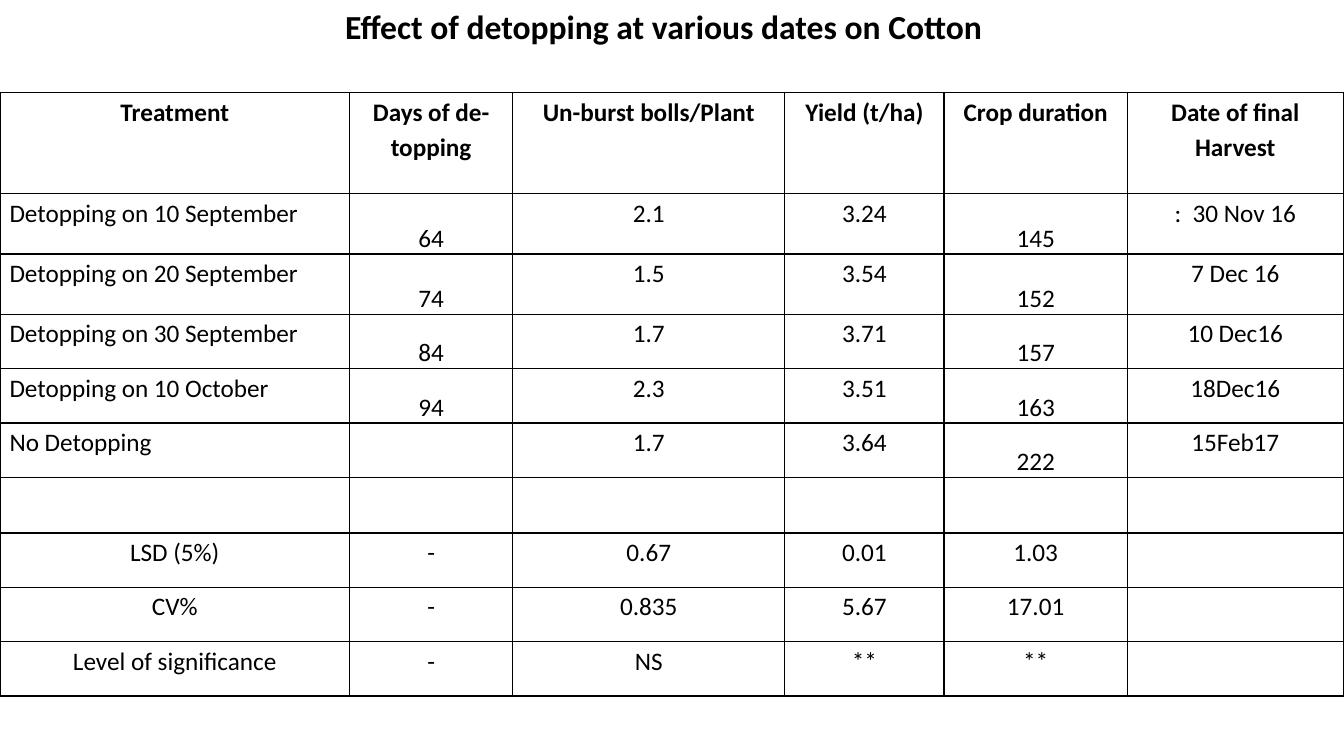
from pptx import Presentation
from pptx.dml.color import RGBColor
from pptx.enum import text
from pptx.oxml import parse_xml
from pptx.oxml.ns import nsdecls
from pptx.util import Cm, Pt

BLACK = RGBColor(0x00, 0x00, 0x00)
FONT = "Calibri"
CENTER, LEFT = text.PP_ALIGN.CENTER, text.PP_ALIGN.LEFT
TOP, BOTTOM = text.MSO_ANCHOR.TOP, text.MSO_ANCHOR.BOTTOM

COLUMN_WIDTHS = [8.81, 4.11, 6.86, 4.01, 4.62, 5.44]
ROW_HEIGHTS = [2.54, 1.52, 1.52, 1.37, 1.37, 1.37, 1.4, 1.37, 1.37, 1.37]
TREATMENT_ROWS = range(1, 6)
DAYS_COLUMNS = (1, 4)

ROWS = [
    ["Treatment", "Days of de-topping", "Un-burst bolls/Plant",
     "Yield (t/ha)", "Crop duration", "Date of final Harvest"],
    ["Detopping on 10 September", "64", "2.1", "3.24", "145", ":  30 Nov 16"],
    ["Detopping on 20 September", "74", "1.5", "3.54", "152", "7 Dec 16"],
    ["Detopping on 30 September", "84", "1.7", "3.71", "157", "10 Dec16"],
    ["Detopping on 10 October", "94", "2.3", "3.51", "163", "18Dec16"],
    ["No Detopping", "", "1.7", "3.64", "222", "15Feb17"],
    [""] * 6,
    ["LSD (5%)", "-", "0.67", "0.01", "1.03", ""],
    ["CV%", "-", "0.835", "5.67", "17.01", ""],
    ["Level of significance", "-", "NS", "**", "**", ""],
]


def set_attributes(obj, values):
    for name, value in values.items():
        setattr(obj, name, value)


def write(p, words, size, bold, align):
    p.alignment = align
    r = p.add_run()
    r.text = words
    set_attributes(r.font, {"name": FONT, "size": Pt(size), "bold": bold})
    r.font.color.rgb = BLACK


def add_title(slide, words):
    sp = slide.shapes.title
    set_attributes(sp, {"left": Cm(0), "top": Cm(0.03),
                        "width": Cm(33.45), "height": Cm(2.06)})
    tf = sp.text_frame
    set_attributes(tf, {"word_wrap": True, "vertical_anchor": TOP,
                        "auto_size": text.MSO_AUTO_SIZE.NONE})
    write(tf.paragraphs[0], words, 24, True, CENTER)


def add_borders(cell):
    """Draw a thin black line on all four sides; lines precede the fill."""
    tc_pr = cell._tc.get_or_add_tcPr()
    for i, side in enumerate("LRTB"):
        tc_pr.insert(i, parse_xml(
            f'<a:ln{side} {nsdecls("a")} w="{Pt(1)}"><a:solidFill>'
            f'<a:srgbClr val="{BLACK}"/></a:solidFill></a:ln{side}>'))


def format_cell(cell, words, row, column):
    is_treatment = row in TREATMENT_ROWS
    at_bottom = is_treatment and column in DAYS_COLUMNS
    set_attributes(cell, {
        "margin_left": Cm(0.24), "margin_right": Cm(0.24),
        "margin_top": 0, "margin_bottom": 0,
        "vertical_anchor": BOTTOM if at_bottom else TOP})
    cell.fill.background()
    add_borders(cell)
    if words:
        p = cell.text_frame.paragraphs[0]
        p.line_spacing = 1.15
        align = LEFT if is_treatment and column == 0 else CENTER
        write(p, words, 18, row == 0, align)


def add_results_table(slide):
    table = slide.shapes.add_table(
        len(ROWS), len(COLUMN_WIDTHS), Cm(0), Cm(2.34),
        Cm(sum(COLUMN_WIDTHS)), Cm(sum(ROW_HEIGHTS))).table
    set_attributes(table, {"first_row": False, "horz_banding": False})
    for column, width in zip(table.columns, COLUMN_WIDTHS):
        column.width = Cm(width)
    for row, height in zip(table.rows, ROW_HEIGHTS):
        row.height = Cm(height)
    for i, row in enumerate(ROWS):
        for j, words in enumerate(row):
            format_cell(table.cell(i, j), words, i, j)


def main():
    prs = Presentation()
    set_attributes(prs, {"slide_width": Cm(33.87), "slide_height": Cm(19.05)})
    slide = prs.slides.add_slide(prs.slide_layouts.get_by_name("Title Only"))
    add_title(slide, "Effect of detopping at various dates on Cotton")
    add_results_table(slide)
    prs.save("out.pptx")


if __name__ == "__main__":
    main()
